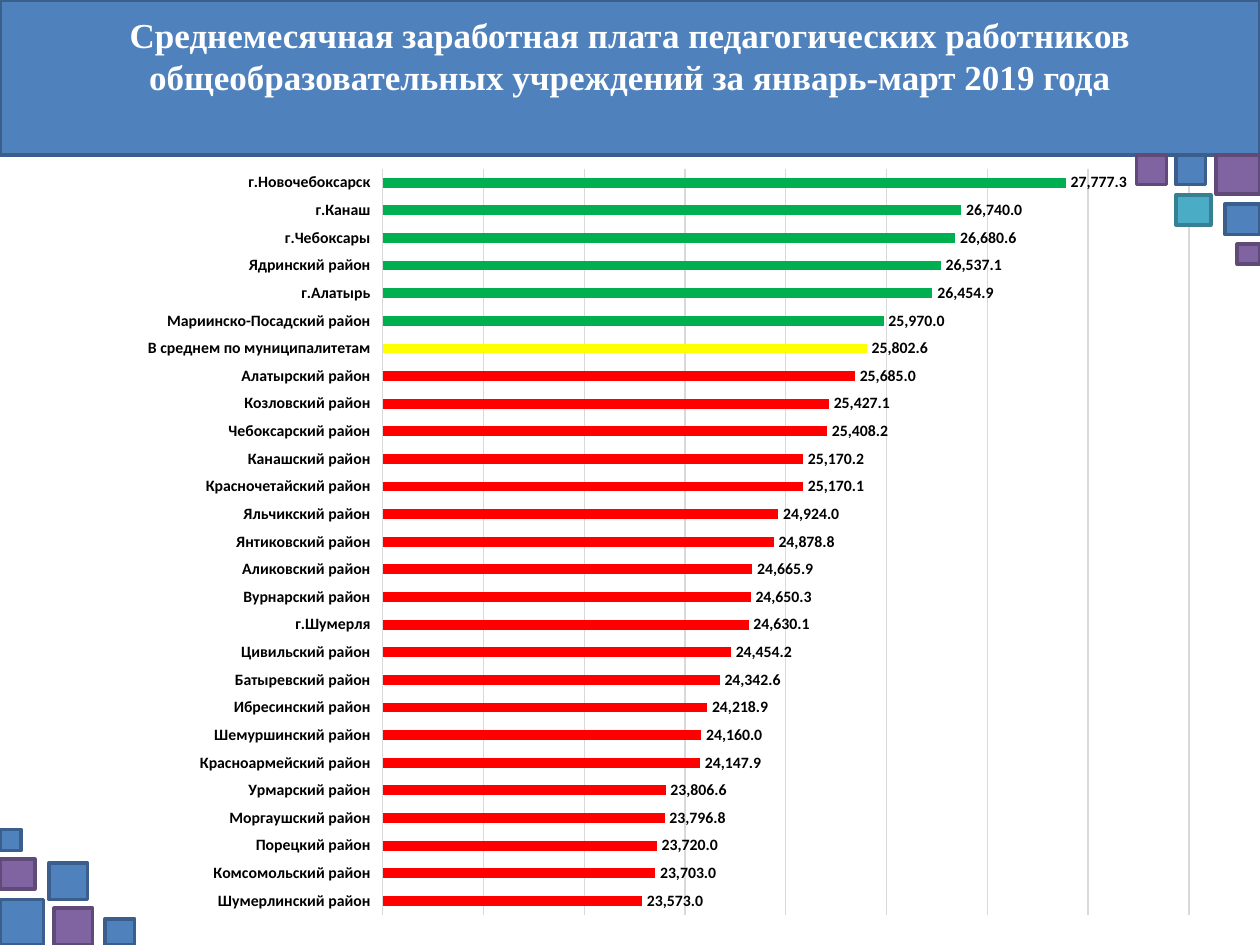
from dataclasses import dataclass

from lxml import etree
from pptx import Presentation
from pptx.chart.data import CategoryChartData
from pptx.dml.color import RGBColor
from pptx.enum.chart import XL_CHART_TYPE, XL_LABEL_POSITION, XL_TICK_LABEL_POSITION, XL_TICK_MARK
from pptx.enum.shapes import MSO_SHAPE
from pptx.enum.text import MSO_ANCHOR, PP_ALIGN
from pptx.oxml import parse_xml
from pptx.oxml.ns import nsdecls, qn
from pptx.util import Pt

RECT = MSO_SHAPE.RECTANGLE
BAR = XL_CHART_TYPE.BAR_CLUSTERED
OUTSIDE_END = XL_LABEL_POSITION.OUTSIDE_END
LABELS_LOW = XL_TICK_LABEL_POSITION.LOW
NO_TICK = XL_TICK_MARK.NONE
TOP, CENTER = MSO_ANCHOR.TOP, PP_ALIGN.CENTER


@dataclass(frozen=True)
class Theme:
    blue: tuple = ("4F81BD", "3A5F8C")  # fill, outline
    purple: tuple = ("8064A2", "5F4A78")
    teal: tuple = ("4BACC6", "377F92")
    above: str = "00B050"
    average: str = "FFFF00"
    below: str = "FF0000"
    grid: str = "D9D9D9"
    text: str = "000000"
    title_text: str = "FFFFFF"
    title_font: str = "Times New Roman"
    chart_font: str = "Calibri"
    title_size: int = 20
    chart_size: int = 10
    label_size: int = 9


THEME = Theme()
TITLE = ("Среднемесячная заработная плата педагогических работников "
         "общеобразовательных учреждений за январь-март 2019 года")
AVERAGE = "В среднем по муниципалитетам"
NUMBER_FORMAT = "#,##0.0"

SALARIES = {
    "г.Новочебоксарск": 27777.3,
    "г.Канаш": 26740.0,
    "г.Чебоксары": 26680.6,
    "Ядринский район": 26537.1,
    "г.Алатырь": 26454.9,
    "Мариинско-Посадский район": 25970.0,
    AVERAGE: 25802.6,
    "Алатырский район": 25685.0,
    "Козловский район": 25427.1,
    "Чебоксарский район": 25408.2,
    "Канашский район": 25170.2,
    "Красночетайский район": 25170.1,
    "Яльчикский район": 24924.0,
    "Янтиковский район": 24878.8,
    "Аликовский район": 24665.9,
    "Вурнарский район": 24650.3,
    "г.Шумерля": 24630.1,
    "Цивильский район": 24454.2,
    "Батыревский район": 24342.6,
    "Ибресинский район": 24218.9,
    "Шемуршинский район": 24160.0,
    "Красноармейский район": 24147.9,
    "Урмарский район": 23806.6,
    "Моргаушский район": 23796.8,
    "Порецкий район": 23720.0,
    "Комсомольский район": 23703.0,
    "Шумерлинский район": 23573.0,
}

# Decorative squares: left, top, width, height, colours
SQUARES = [
    (0, 514, 25, 26, THEME.blue),
    (31, 519, 22, 21, THEME.purple),
    (0, 491, 20, 17, THEME.purple),
    (60, 525, 17, 15, THEME.blue),
    (0, 474, 12, 12, THEME.blue),
    (28, 493, 22, 21, THEME.blue),
    (695, 88.5, 25, 22.5, THEME.purple),
    (700, 116.5, 20, 17.5, THEME.blue),
    (672, 88.5, 17, 17, THEME.blue),
    (707, 139.5, 13, 11.5, THEME.purple),
    (649.5, 88.5, 17, 17, THEME.purple),
    (672, 111.5, 20, 17, THEME.teal),
]


def set_attrs(obj, **values):
    for name, value in values.items():
        setattr(obj, name, value)


def format_font(font, name, size, color, bold):
    set_attrs(font, name=name, size=Pt(size), bold=bold)
    font.color.rgb = RGBColor.from_string(color)


def format_line(line, color, width):
    line.color.rgb = RGBColor.from_string(color)
    line.width = Pt(width)


def add_box(s, left, top, width, height, colors):
    sp = s.shapes.add_shape(RECT, Pt(left), Pt(top), Pt(width), Pt(height))
    fill, outline = colors
    sp.fill.solid()
    sp.fill.fore_color.rgb = RGBColor.from_string(fill)
    format_line(sp.line, outline, 2)
    sp.shadow.inherit = False
    return sp


def add_title(s):
    tf = add_box(s, 0, 0, 720, 88.5, THEME.blue).text_frame
    set_attrs(tf, word_wrap=True, vertical_anchor=TOP, margin_top=Pt(8))
    p = tf.paragraphs[0]
    p.alignment = CENTER
    r = p.add_run()
    r.text = TITLE
    format_font(r.font, THEME.title_font, THEME.title_size, THEME.title_text, True)


def set_plot_area(chart, **box):
    """Fix the inner plot area as fractions of the chart; clear the background."""
    plot_area = chart._chartSpace.chart.plotArea
    for old in plot_area.findall(qn("c:layout")):
        plot_area.remove(old)
    layout = etree.Element(qn("c:layout"))
    manual = etree.SubElement(layout, qn("c:manualLayout"))
    settings = {"layoutTarget": "inner", "xMode": "edge", "yMode": "edge", **box}
    for tag, value in settings.items():
        etree.SubElement(manual, qn(f"c:{tag}")).set("val", str(value))
    plot_area.insert(0, layout)
    chart._chartSpace.chart.addnext(parse_xml(
        f'<c:spPr {nsdecls("c", "a")}><a:noFill/><a:ln><a:noFill/></a:ln></c:spPr>'))


def bar_color(value):
    average = SALARIES[AVERAGE]
    if value == average:
        return THEME.average
    return THEME.above if value > average else THEME.below


def add_salary_chart(s):
    data = CategoryChartData(number_format=NUMBER_FORMAT)
    data.categories = list(SALARIES)
    data.add_series("Series 1", list(SALARIES.values()))
    chart = s.shapes.add_chart(BAR, Pt(3), Pt(78.5), Pt(680.5), Pt(451.5), data).chart
    set_attrs(chart, has_legend=False, has_title=False)
    format_font(chart.font, THEME.chart_font, THEME.chart_size, THEME.text, False)
    set_plot_area(chart, x=0.317, y=0.04, w=0.677, h=0.944)

    # Axes
    cat, val = chart.category_axis, chart.value_axis
    set_attrs(cat, reverse_order=True, major_tick_mark=NO_TICK, minor_tick_mark=NO_TICK,
              tick_label_position=LABELS_LOW)
    format_line(cat.format.line, THEME.grid, 0.75)
    set_attrs(val, visible=False, minimum_scale=21000, maximum_scale=29000,
              major_unit=1000, has_major_gridlines=True)
    format_line(val.major_gridlines.format.line, THEME.grid, 0.75)

    # Bars and value labels
    plot = chart.plots[0]
    set_attrs(plot, gap_width=182, vary_by_categories=False, has_data_labels=True)
    labels = plot.data_labels
    set_attrs(labels, show_value=True, position=OUTSIDE_END,
              number_format=NUMBER_FORMAT, number_format_is_linked=False)
    for font in (cat.tick_labels.font, labels.font):
        format_font(font, THEME.chart_font, THEME.label_size, THEME.text, True)
    series = plot.series[0]
    series.invert_if_negative = False
    for i, value in enumerate(SALARIES.values()):
        fill = series.points[i].format.fill
        fill.solid()
        fill.fore_color.rgb = RGBColor.from_string(bar_color(value))


def main():
    prs = Presentation()
    set_attrs(prs, slide_width=Pt(720), slide_height=Pt(540))
    s = prs.slides.add_slide(prs.slide_layouts[6])
    add_title(s)
    add_salary_chart(s)
    for square in SQUARES:
        add_box(s, *square)
    prs.save("out.pptx")


if __name__ == "__main__":
    main()
